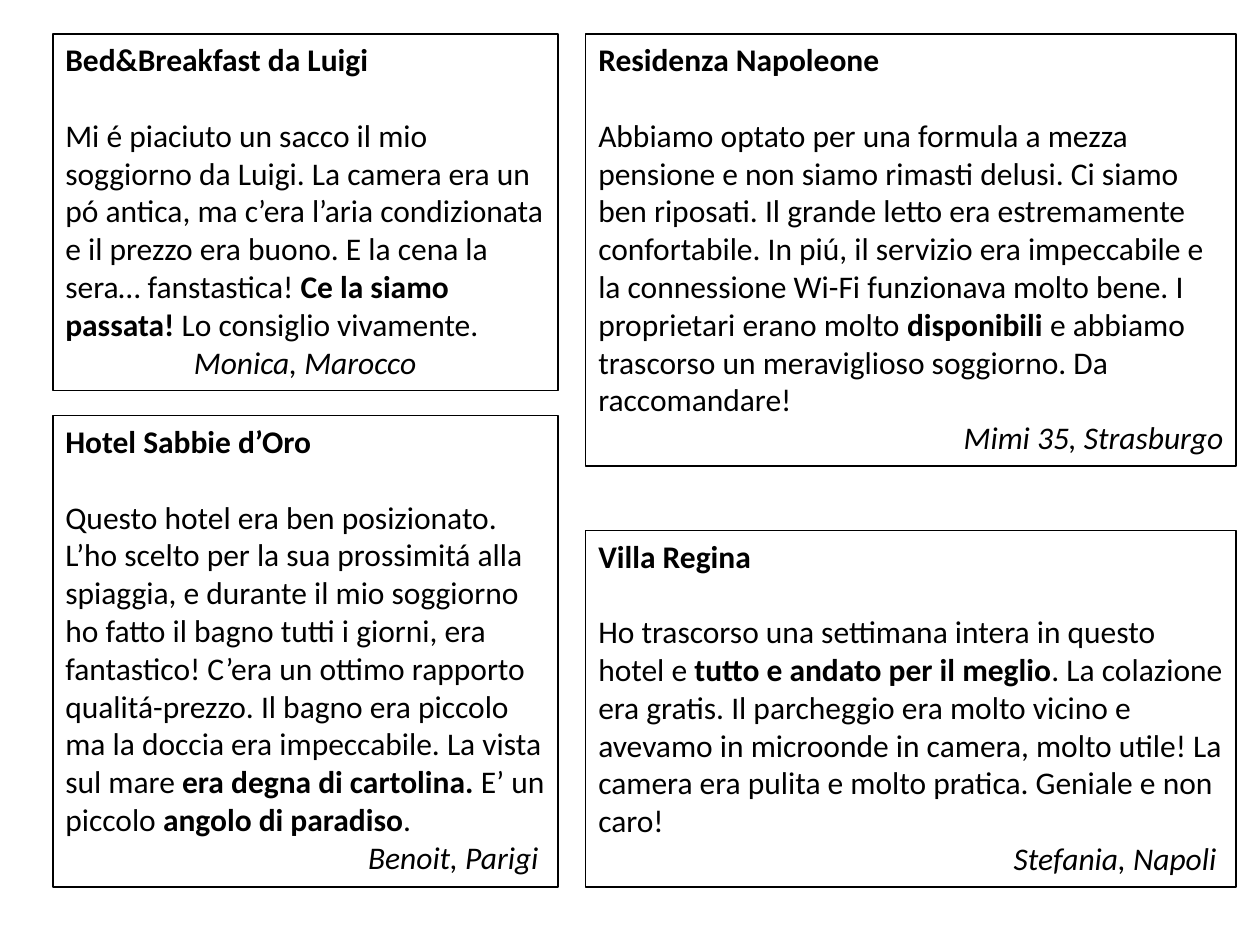
from pptx import Presentation
from pptx.dml.color import RGBColor
from pptx.enum import shapes, text
from pptx.util import Inches, Pt

FONT = {"name": "Calibri", "size": Pt(18)}
BLANK_LINE = Pt(21.6)
LEFT_COLUMN = (0.42, 4.01)
RIGHT_COLUMN = (4.65, 5.16)
TOP, BOTTOM = 0.27, 7.04

# Body text is a list of runs, alternately regular and bold.
LUIGI = (
    "Bed&Breakfast da Luigi",
    ["Mi é piaciuto un sacco il mio soggiorno da Luigi. La camera era un pó "
     "antica, ma c’era l’aria condizionata e il prezzo era buono. E la cena "
     "la sera… fanstastica! ",
     "Ce la siamo passata! ",
     "Lo consiglio vivamente."],
    "Monica, Marocco",
)
NAPOLEONE = (
    "Residenza Napoleone",
    ["Abbiamo optato per una formula a mezza pensione e non siamo rimasti "
     "delusi. Ci siamo ben riposati. Il grande letto era estremamente "
     "confortabile. In piú, il servizio era impeccabile e la connessione "
     "Wi-Fi funzionava molto bene. I proprietari erano molto ",
     "disponibili ",
     "e abbiamo trascorso un meraviglioso soggiorno. Da raccomandare!"],
    "Mimi 35, Strasburgo",
)
SABBIE = (
    "Hotel Sabbie d’Oro",
    ["Questo hotel era ben posizionato. L’ho scelto per la sua prossimitá "
     "alla spiaggia, e durante il mio soggiorno ho fatto il bagno tutti i "
     "giorni, era fantastico! C’era un ottimo rapporto qualitá-prezzo. Il "
     "bagno era piccolo ma la doccia era impeccabile. La vista sul mare ",
     "era degna di cartolina. ",
     "E’ un piccolo ",
     "angolo di paradiso",
     "."],
    "Benoit, Parigi ",
)
REGINA = (
    "Villa Regina",
    ["Ho trascorso una settimana intera in questo hotel e ",
     "tutto e andato per il meglio",
     ". La colazione era gratis. Il parcheggio era molto vicino e avevamo in "
     "microonde in camera, molto utile! La camera era pulita e molto "
     "pratica. Geniale e non caro!"],
    "Stefania, Napoli ",
)


def color(hex_string):
    return RGBColor.from_string(hex_string)


def set_values(target, values):
    for name, value in values.items():
        setattr(target, name, value)


def add_run(paragraph, words, **style):
    run = paragraph.add_run()
    run.text = words
    set_values(run.font, {**FONT, **style})
    run.font.color.rgb = color("000000")


def add_review(slide, column, top, height, review, author_indent=None):
    """Place a framed review; its author is right-aligned unless indented."""
    left, width = column
    title, body_runs, author = review
    box = slide.shapes.add_shape(
        shapes.MSO_SHAPE.RECTANGLE,
        Inches(left), Inches(top), Inches(width), Inches(height))
    box.shadow.inherit = False
    box.fill.background()
    box.line.color.rgb = color("000000")
    box.line.width = Pt(0.75)

    frame = box.text_frame
    set_values(frame, {
        "word_wrap": True,
        "auto_size": text.MSO_AUTO_SIZE.SHAPE_TO_FIT_TEXT,
        "vertical_anchor": text.MSO_ANCHOR.TOP,
    })
    heading = frame.paragraphs[0]
    body = frame.add_paragraph()
    signature = frame.add_paragraph()
    for paragraph in frame.paragraphs:
        paragraph.alignment = text.PP_ALIGN.LEFT

    add_run(heading, title, bold=True)
    body.space_before = BLANK_LINE
    for index, words in enumerate(body_runs):
        add_run(body, words, bold=index % 2 == 1)
    if author_indent is None:
        signature.alignment = text.PP_ALIGN.RIGHT
    else:
        properties = signature._p.get_or_add_pPr()
        properties.set("marL", str(Inches(author_indent)))
    add_run(signature, author, italic=True)


def build_reviews_slide(presentation):
    slide = presentation.slides.add_slide(presentation.slide_layouts[6])
    short, medium, tall = 2.83, 3.43, 3.74
    add_review(slide, LEFT_COLUMN, TOP, short, LUIGI, author_indent=1.02)
    add_review(slide, RIGHT_COLUMN, TOP, medium, NAPOLEONE)
    add_review(slide, LEFT_COLUMN, BOTTOM - tall, tall, SABBIE)
    add_review(slide, RIGHT_COLUMN, BOTTOM - short, short, REGINA)


def main():
    presentation = Presentation()
    presentation.slide_width = Inches(10)
    presentation.slide_height = Inches(7.5)
    build_reviews_slide(presentation)
    presentation.save("out.pptx")


if __name__ == "__main__":
    main()
